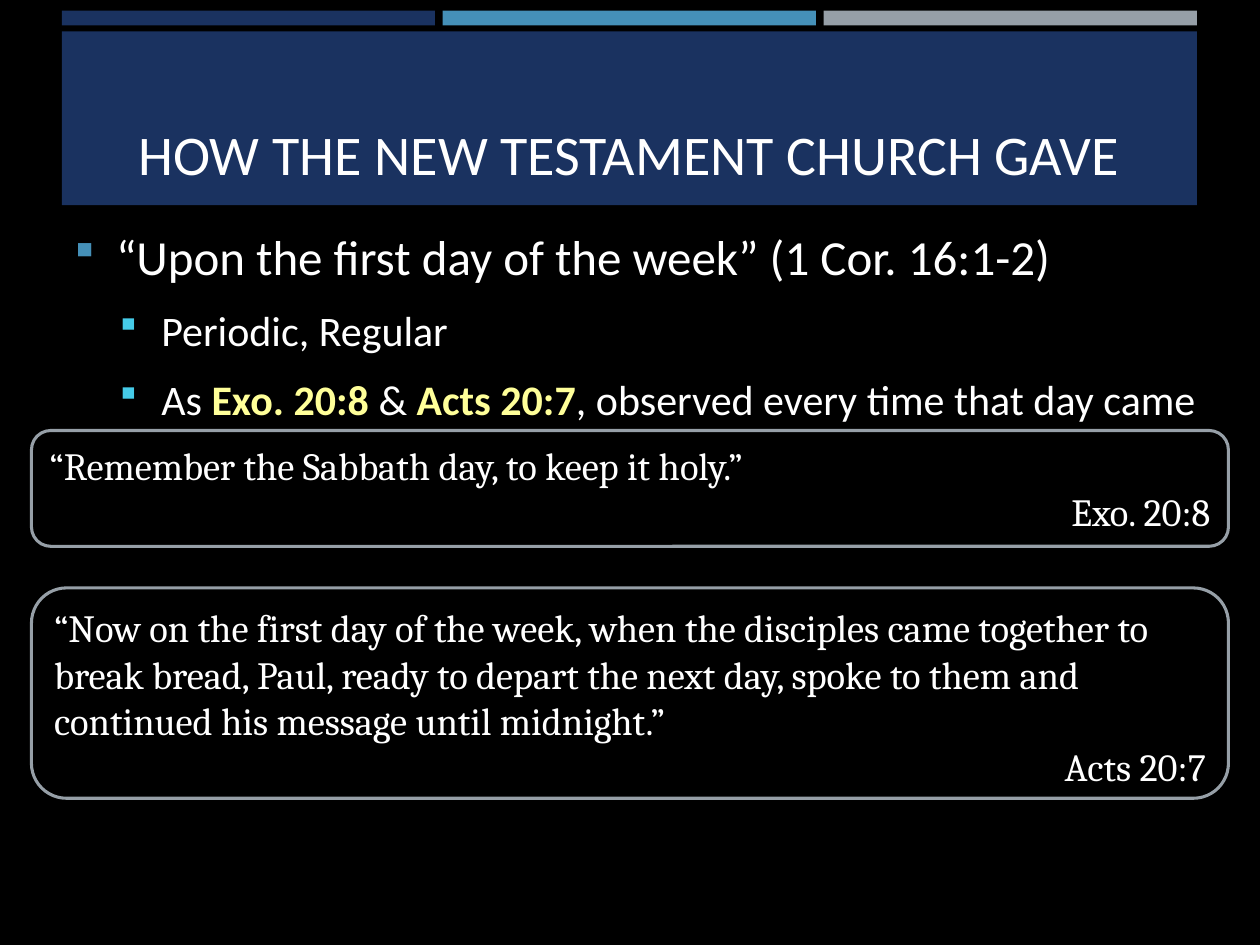
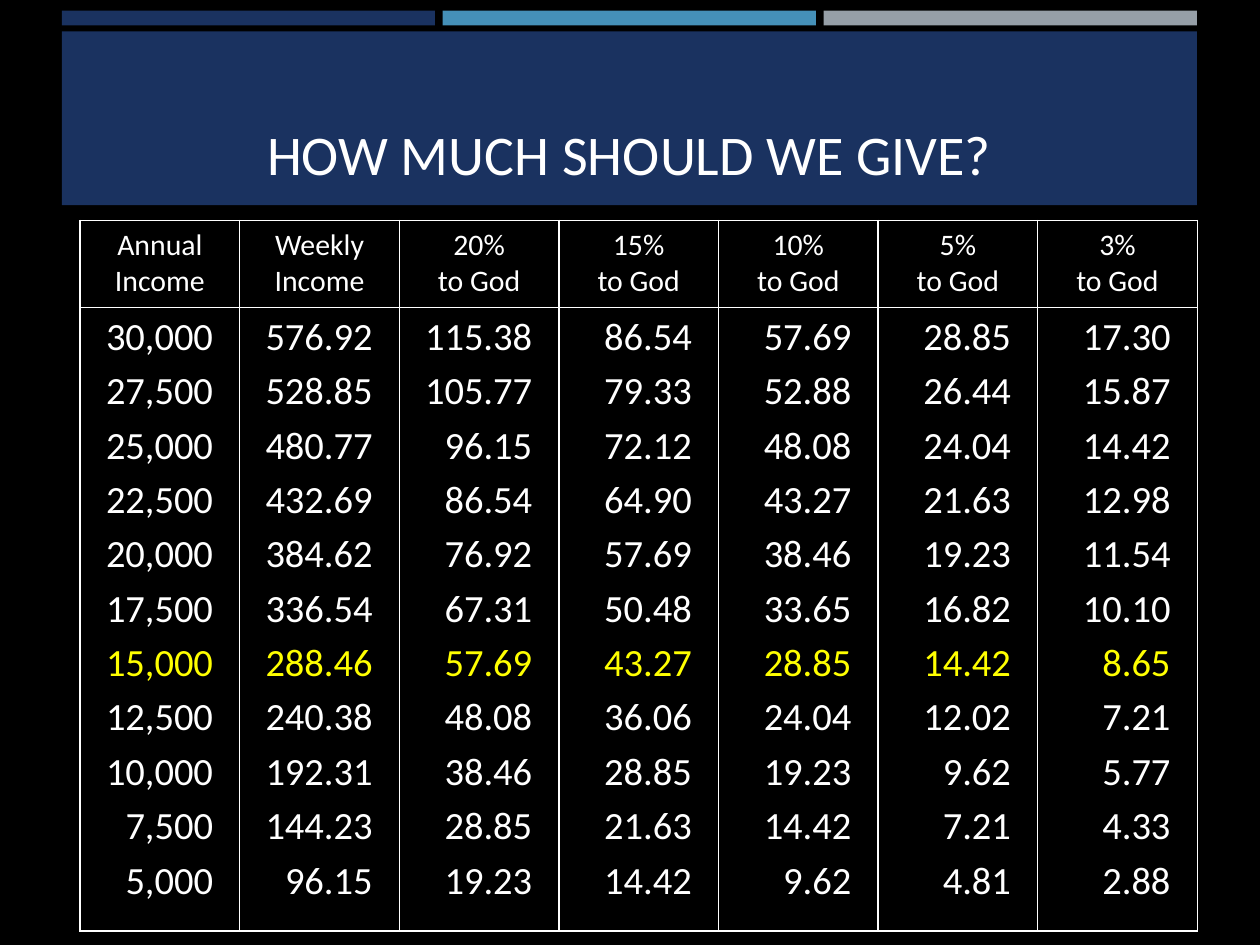
from lxml.etree import SubElement
from pptx import Presentation
from pptx.dml.color import RGBColor
from pptx.enum.shapes import MSO_SHAPE
from pptx.enum.text import MSO_ANCHOR, MSO_AUTO_SIZE, PP_ALIGN
from pptx.oxml.ns import qn
from pptx.util import Pt

COLORS = {
    "black": "000000",
    "white": "FFFFFF",
    "navy": "1A3260",
    "blue": "4590B8",
    "gray": "969FA7",
    "cyan": "45CBE8",
    "reference": "FFFF99",
    "highlight": "FFFF00",
}
SANS, SERIF = "Calibri", "Cambria"

LEFT, WIDTH = 35.3, 648.7
BAND_GAP = 4.4

# (text, is a highlighted reference) pairs, one list per bullet
BULLETS = [
    (0, [("“Upon the first day of the week” (1 Cor. 16:1-2)", False)]),
    (1, [("Periodic, Regular", False)]),
    (1, [("As ", False), ("Exo. 20:8", True), (" & ", False),
         ("Acts 20:7", True), (", observed every time that day came", False)]),
]
# size, left indent, space before, bullet colour
BULLET_LEVELS = [(28, 23.8, 0, "blue"), (24, 49.7, 4.8, "cyan")]

QUOTES = [
    (246, 66.2, "“Remember the Sabbath day, to keep it holy.”", "Exo. 20:8"),
    (336, 120.2,
     "“Now on the first day of the week, when the disciples came together to "
     "break bread, Paul, ready to depart the next day, spoke to them and "
     "continued his message until midnight.”", "Acts 20:7"),
]

GIVING_HEADINGS = ["Annual Income", "Weekly Income"] + [
    f"{share}%\vto God" for share in (20, 15, 10, 5, 3)]
GIVING_ROWS = [
    ("30,000", "576.92", "115.38", "86.54", "57.69", "28.85", "17.30"),
    ("27,500", "528.85", "105.77", "79.33", "52.88", "26.44", "15.87"),
    ("25,000", "480.77", "96.15", "72.12", "48.08", "24.04", "14.42"),
    ("22,500", "432.69", "86.54", "64.90", "43.27", "21.63", "12.98"),
    ("20,000", "384.62", "76.92", "57.69", "38.46", "19.23", "11.54"),
    ("17,500", "336.54", "67.31", "50.48", "33.65", "16.82", "10.10"),
    ("15,000", "288.46", "57.69", "43.27", "28.85", "14.42", "8.65"),
    ("12,500", "240.38", "48.08", "36.06", "24.04", "12.02", "7.21"),
    ("10,000", "192.31", "38.46", "28.85", "19.23", "9.62", "5.77"),
    ("7,500", "144.23", "28.85", "21.63", "14.42", "7.21", "4.33"),
    ("5,000", "96.15", "19.23", "14.42", "9.62", "4.81", "2.88"),
]
HIGHLIGHTED_ROW = 6


def rgb(name):
    return RGBColor.from_string(COLORS[name])


def place(shape, left, top, width, height):
    shape.left, shape.top = Pt(left), Pt(top)
    shape.width, shape.height = Pt(width), Pt(height)


def style_font(font, face, size, color="white"):
    font.name, font.size = face, Pt(size)
    font.color.rgb = rgb(color)


def set_margins(frame, left, top, right, bottom):
    frame.margin_left, frame.margin_top = Pt(left), Pt(top)
    frame.margin_right, frame.margin_bottom = Pt(right), Pt(bottom)


def add_master_bands(prs, slide):
    """Draw the bands on a slide, then move them behind everything on the master."""
    band_width = (WIDTH - 2 * BAND_GAP) / 3
    bands = [(LEFT + i * (band_width + BAND_GAP), 6, band_width, 8.6, color)
             for i, color in enumerate(("navy", "blue", "gray"))]
    bands.append((LEFT, 18, WIDTH, 99.2, "navy"))
    master_tree = prs.slide_master.shapes.element
    for i, (left, top, width, height, color) in enumerate(bands):
        band = slide.shapes.add_shape(
            MSO_SHAPE.RECTANGLE, Pt(left), Pt(top), Pt(width), Pt(height))
        band.shadow.inherit = False
        band.fill.solid()
        band.fill.fore_color.rgb = rgb(color)
        band.line.fill.background()
        band.element.nvSpPr.cNvPr.id = 20 + i
        master_tree.insert(2 + i, band.element)


def set_title(slide, text):
    title = slide.shapes.title
    place(title, LEFT, 25, WIDTH, 85.5)
    frame = title.text_frame
    frame.text = text
    frame.auto_size = MSO_AUTO_SIZE.NONE
    frame.vertical_anchor = MSO_ANCHOR.BOTTOM
    set_margins(frame, 0, 3.6, 0, 3.6)
    heading = frame.paragraphs[0]
    heading.alignment = PP_ALIGN.CENTER
    style_font(heading.font, SANS, 32)


def set_square_bullet(paragraph, left_indent, color):
    properties = paragraph._p.get_or_add_pPr()
    properties.set("marL", str(Pt(left_indent)))
    properties.set("indent", str(-Pt(23.8)))
    bullet_color = SubElement(properties, qn("a:buClr"))
    SubElement(bullet_color, qn("a:srgbClr"), val=COLORS[color])
    SubElement(properties, qn("a:buSzPct"), val="92000")
    SubElement(properties, qn("a:buFont"), typeface="Wingdings")
    SubElement(properties, qn("a:buChar"), char="§")


def fill_bullets(body, bullets):
    place(body, LEFT, 124, 697, 463.7)
    frame = body.text_frame
    frame.auto_size = MSO_AUTO_SIZE.NONE
    set_margins(frame, 7.2, 5.4, 7.2, 3.6)
    for i, (level, parts) in enumerate(bullets):
        size, left_indent, space_before, color = BULLET_LEVELS[level]
        paragraph = frame.add_paragraph() if i else frame.paragraphs[0]
        paragraph.level = level
        paragraph.space_before, paragraph.space_after = Pt(space_before), Pt(6)
        set_square_bullet(paragraph, left_indent, color)
        style_font(paragraph.font, SANS, size)
        for text, is_reference in parts:
            run = paragraph.add_run()
            run.text = text
            style_font(run.font, SANS, size, "reference" if is_reference else "white")
            if is_reference:
                run.font.bold = True


def add_quote(slide, top, height, quote, reference):
    box = slide.shapes.add_shape(
        MSO_SHAPE.ROUNDED_RECTANGLE, Pt(18), Pt(top), Pt(684), Pt(height))
    box.shadow.inherit = False
    box.fill.background()
    box.line.color.rgb = rgb("gray")
    box.line.width = Pt(1.75)
    frame = box.text_frame
    frame.word_wrap = True
    frame.vertical_anchor = MSO_ANCHOR.TOP
    frame.text = f"{quote}\n{reference}"
    for paragraph, alignment in zip(frame.paragraphs, (PP_ALIGN.LEFT, PP_ALIGN.RIGHT)):
        paragraph.alignment = alignment
        style_font(paragraph.font, SERIF, 22)


def set_cell_borders(cell):
    properties = cell._tc.get_or_add_tcPr()
    for i, side in enumerate(("a:lnL", "a:lnR", "a:lnT", "a:lnB")):
        border = properties.makeelement(qn(side), {"w": str(Pt(1))})
        fill = SubElement(border, qn("a:solidFill"))
        SubElement(fill, qn("a:srgbClr"), val=COLORS["white"])
        properties.insert(i, border)


def fill_cell(cell, text, size, alignment, right_margin):
    cell.text = text
    cell.fill.background()
    set_cell_borders(cell)
    set_margins(cell, 6.5, 3.6, right_margin, 3.6)
    for paragraph in cell.text_frame.paragraphs:
        paragraph.alignment = alignment
        paragraph.space_after = Pt(4.3)
        style_font(paragraph.font, SANS, size)


def add_giving_table(slide, headings, rows):
    """One tall cell per column holds that column's amounts as paragraphs."""
    table = slide.shapes.add_table(
        2, len(headings), Pt(45.8), Pt(126), Pt(638.4), Pt(406)).table
    table.first_row = table.horz_banding = False
    table.rows[0].height, table.rows[1].height = Pt(49.7), Pt(356.3)
    for i, (heading, amounts) in enumerate(zip(headings, zip(*rows))):
        table.columns[i].width = Pt(638.4 / len(headings))
        fill_cell(table.cell(0, i), heading, 17, PP_ALIGN.CENTER, 6.5)
        amounts_cell = table.cell(1, i)
        fill_cell(amounts_cell, "\n".join(amounts), 22, PP_ALIGN.RIGHT, 15.3)
        highlighted = amounts_cell.text_frame.paragraphs[HIGHLIGHTED_ROW]
        highlighted.font.color.rgb = rgb("highlight")


def main():
    prs = Presentation()
    prs.slide_width, prs.slide_height = Pt(720), Pt(540)
    background = prs.slide_master.background.fill
    background.solid()
    background.fore_color.rgb = rgb("black")

    church_slide = prs.slides.add_slide(prs.slide_layouts[1])
    add_master_bands(prs, church_slide)
    set_title(church_slide, "HOW THE NEW TESTAMENT CHURCH GAVE")
    fill_bullets(church_slide.placeholders[1], BULLETS)
    for quote in QUOTES:
        add_quote(church_slide, *quote)

    giving_slide = prs.slides.add_slide(prs.slide_layouts[5])
    set_title(giving_slide, "HOW MUCH SHOULD WE GIVE?")
    add_giving_table(giving_slide, GIVING_HEADINGS, GIVING_ROWS)

    prs.save("out.pptx")


if __name__ == "__main__":
    main()
